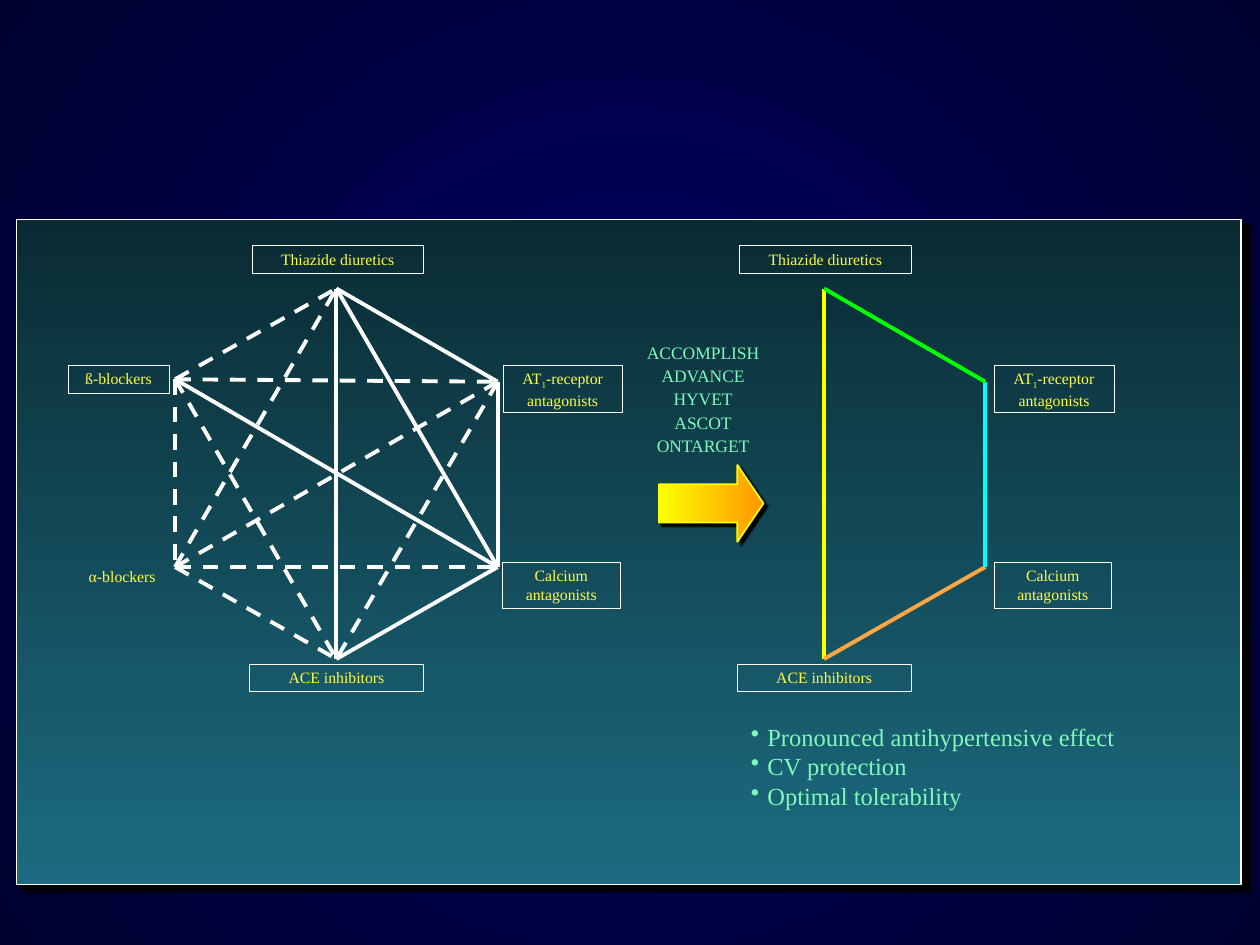
from pptx import Presentation
from pptx.dml.color import RGBColor
from pptx.enum.dml import MSO_LINE
from pptx.enum.shapes import MSO_CONNECTOR, MSO_SHAPE
from pptx.enum.text import MSO_ANCHOR, MSO_AUTO_SIZE, PP_ALIGN
from pptx.oxml.ns import qn
from pptx.util import Inches, Pt
from lxml.etree import SubElement

NAVY, MIDNIGHT = RGBColor(0x00, 0x00, 0x66), RGBColor(0x00, 0x00, 0x2F)
DARK_TEAL, TEAL = RGBColor(0x0A, 0x2B, 0x33), RGBColor(0x1C, 0x6B, 0x80)
WHITE, YELLOW = RGBColor(0xFF, 0xFF, 0xFF), RGBColor(0xFF, 0xFF, 0x00)
AMBER, ORANGE = RGBColor(0xFF, 0x96, 0x00), RGBColor(0xFF, 0xA6, 0x40)
CYAN, GREEN = RGBColor(0x00, 0xFF, 0xFF), RGBColor(0x00, 0xFF, 0x02)
LABEL_YELLOW, MINT = RGBColor(0xFF, 0xFB, 0x43), RGBColor(0x7F, 0xF9, 0xBB)
FONT = "Times New Roman"

VERTICES = {
    "thiazide": (1.28, 0),
    "at1": (2.56, 0.74),
    "calcium": (2.56, 2.21),
    "ace": (1.28, 2.94),
    "alpha": (0, 2.21),
    "beta": (0, 0.72),
}
SOLID_PAIRS = [
    ("thiazide", "calcium"), ("thiazide", "ace"), ("beta", "calcium"),
    ("ace", "calcium"), ("at1", "calcium"), ("thiazide", "at1"),
]
DASHED_PAIRS = [
    ("alpha", "thiazide"), ("alpha", "at1"), ("beta", "at1"),
    ("alpha", "calcium"), ("beta", "ace"), ("at1", "ace"),
    ("alpha", "ace"), ("beta", "alpha"), ("beta", "thiazide"),
]
PREFERRED_PAIRS = [
    ("thiazide", "ace", YELLOW), ("ace", "calcium", ORANGE),
    ("at1", "calcium", CYAN), ("thiazide", "at1", GREEN),
]
LABELS = {
    "thiazide": ((0.61, 0, 1.36, 0.22), [["Thiazide diuretics"]]),
    "ace": ((0.59, 3.32, 1.38, 0.22), [["ACE inhibitors"]]),
    "calcium": ((2.6, 2.51, 0.93, 0.37), [["Calcium antagonists"]]),
    "at1": ((2.6, 0.95, 0.95, 0.37), [["AT", "1", "-receptor"], ["antagonists"]]),
    "beta": ((-0.85, 0.95, 0.8, 0.22), [["ß-blockers"]]),
    "alpha": ((-0.85, 2.52, 0.86, 0.22), [["α-blockers"]]),
}


def set_gradient(fill, start, end, angle=0):
    """Fill with a two-colour gradient."""
    fill.gradient()
    fill.gradient_angle = angle
    for stop, color in zip(fill.gradient_stops, (start, end)):
        stop.color.rgb = color


def add_shadow(shape, distance, degrees):
    """Give a shape a black outer shadow."""
    shape.shadow.inherit = False
    effects = shape._element.spPr.find(qn("a:effectLst"))
    outer = SubElement(effects, qn("a:outerShdw"), blurRad=str(Pt(1)),
                       dist=str(Pt(distance)), dir=str(degrees * 60000),
                       algn="ctr", rotWithShape="0")
    SubElement(outer, qn("a:srgbClr"), val="000000")


def set_background(slide):
    """Paint the radial background."""
    set_gradient(slide.background.fill, NAVY, MIDNIGHT)
    gradient = slide.element.find(".//" + qn("a:gradFill"))
    gradient.remove(gradient.find(qn("a:lin")))
    radial = SubElement(gradient, qn("a:path"), path="circle")
    SubElement(radial, qn("a:fillToRect"), l="50000", t="50000", r="50000", b="50000")


def write_text(shape, lines, size, color, inset, align=PP_ALIGN.LEFT, wrap=True):
    """Write lines of runs and return the text frame."""
    frame = shape.text_frame
    frame.word_wrap = wrap
    frame.auto_size = MSO_AUTO_SIZE.SHAPE_TO_FIT_TEXT
    frame.vertical_anchor = MSO_ANCHOR.TOP
    frame.margin_left = frame.margin_right = Inches(inset)
    frame.margin_top = frame.margin_bottom = Inches(inset)
    for index, words in enumerate(lines):
        paragraph = frame.add_paragraph() if index else frame.paragraphs[0]
        paragraph.alignment = align
        for word in words:
            run = paragraph.add_run()
            run.text = word
            run.font.name, run.font.size = FONT, Pt(size)
            run.font.color.rgb = color
            if word == "1":
                run._r.get_or_add_rPr().set("baseline", "-25000")
    return frame


def add_panel(shapes, *box):
    """Draw the teal panel."""
    panel = shapes.add_shape(MSO_SHAPE.RECTANGLE, *map(Inches, box))
    set_gradient(panel.fill, DARK_TEAL, TEAL, 270)
    panel.line.color.rgb, panel.line.width = WHITE, Pt(0.75)
    add_shadow(panel, 5, 37)


def add_labels(shapes, left, top, drugs):
    """Place the drug class labels around a hexagon."""
    for drug in drugs:
        (x, y, width, height), lines = LABELS[drug]
        box = [Inches(value) for value in (left + x, top + y, width, height)]
        if drug == "alpha":
            label = shapes.add_textbox(*box)
        else:
            label = shapes.add_shape(MSO_SHAPE.RECTANGLE, *box)
            label.shadow.inherit = False
            label.fill.background()
            label.line.color.rgb, label.line.width = WHITE, Pt(0.25)
        write_text(label, lines, 9, LABEL_YELLOW, 0.03, PP_ALIGN.CENTER)


def add_link(shapes, left, top, start, end, color, dashed=False):
    """Join two hexagon vertices."""
    (x1, y1), (x2, y2) = VERTICES[start], VERTICES[end]
    link = shapes.add_connector(MSO_CONNECTOR.STRAIGHT, Inches(left + x1), Inches(top + y1),
                                Inches(left + x2), Inches(top + y2))
    link.line.color.rgb, link.line.width = color, Pt(2.25)
    if dashed:
        link.line.dash_style = MSO_LINE.DASH
    SubElement(link._element.spPr, qn("a:effectLst"))


def add_all_combinations(shapes, left, top):
    """Draw the hexagon of all drug combinations."""
    add_labels(shapes, left, top - 0.34, LABELS)
    links = shapes.add_group_shape().shapes
    for pairs, dashed in ((DASHED_PAIRS, True), (SOLID_PAIRS, False)):
        for start, end in pairs:
            add_link(links, left, top, start, end, WHITE, dashed)


def add_preferred_combinations(shapes, left, top):
    """Draw the half hexagon of preferred combinations."""
    add_labels(shapes, left, top - 0.34, ["thiazide", "ace"])
    add_labels(shapes, left + 0.03, top - 0.34, ["calcium", "at1"])
    for start, end, color in PREFERRED_PAIRS:
        add_link(shapes, left, top, start, end, color)


def add_arrow(shapes, left, top, width, height):
    """Draw the block arrow between the hexagons."""
    neck, right, bottom = left + 0.75 * width, left + width, top + height
    upper, lower = top + height / 4, bottom - height / 4
    outline = [(neck, lower), (left, lower), (left, upper), (neck, upper),
               (neck, top), (right, top + height / 2)]
    builder = shapes.build_freeform(Inches(neck), Inches(bottom))
    builder.add_line_segments([(Inches(x), Inches(y)) for x, y in outline], close=True)
    arrow = builder.convert_to_shape()
    set_gradient(arrow.fill, YELLOW, AMBER)
    arrow.line.color.rgb, arrow.line.width = YELLOW, Pt(1)
    add_shadow(arrow, 2.8, 45)


def add_benefits(shapes, *box):
    """List the benefits as bullets."""
    benefits = ["Pronounced antihypertensive effect", "CV protection", "Optimal tolerability"]
    frame = write_text(shapes.add_textbox(*map(Inches, box)),
                       [[benefit] for benefit in benefits], 14, MINT, 0.04)
    for paragraph in frame.paragraphs:
        properties = paragraph._p.get_or_add_pPr()
        properties.set("marL", str(Inches(0.13)))
        properties.set("indent", str(Inches(-0.13)))
        bullet_color = SubElement(properties, qn("a:buClr"))
        SubElement(bullet_color, qn("a:srgbClr"), val=str(MINT))
        SubElement(properties, qn("a:buChar"), char="•")


def add_trials(shapes, *box):
    """List the trial names above the arrow."""
    trials = ["ACCOMPLISH", "ADVANCE", "HYVET", "ASCOT", "ONTARGET"]
    frame = write_text(shapes.add_textbox(*map(Inches, box)), [[trial] for trial in trials],
                       10, MINT, 0.04, PP_ALIGN.CENTER, wrap=False)
    for paragraph in frame.paragraphs:
        paragraph.line_spacing = 1.1


def main():
    """Build and save the slide."""
    deck = Presentation()
    deck.slide_width, deck.slide_height = Inches(10), Inches(7.5)
    slide = deck.slides.add_slide(deck.slide_layouts[6])
    shapes = slide.shapes
    set_background(slide)
    add_panel(shapes, 0.13, 1.74, 9.72, 5.28)
    add_all_combinations(shapes, 1.39, 2.29)
    add_preferred_combinations(shapes, 5.26, 2.29)
    add_arrow(shapes, 5.23, 3.69, 0.83, 0.61)
    add_benefits(shapes, 5.92, 5.69, 3.71, 0.78)
    add_trials(shapes, 5.08, 2.66, 1, 1)
    deck.save("out.pptx")


if __name__ == "__main__":
    main()
